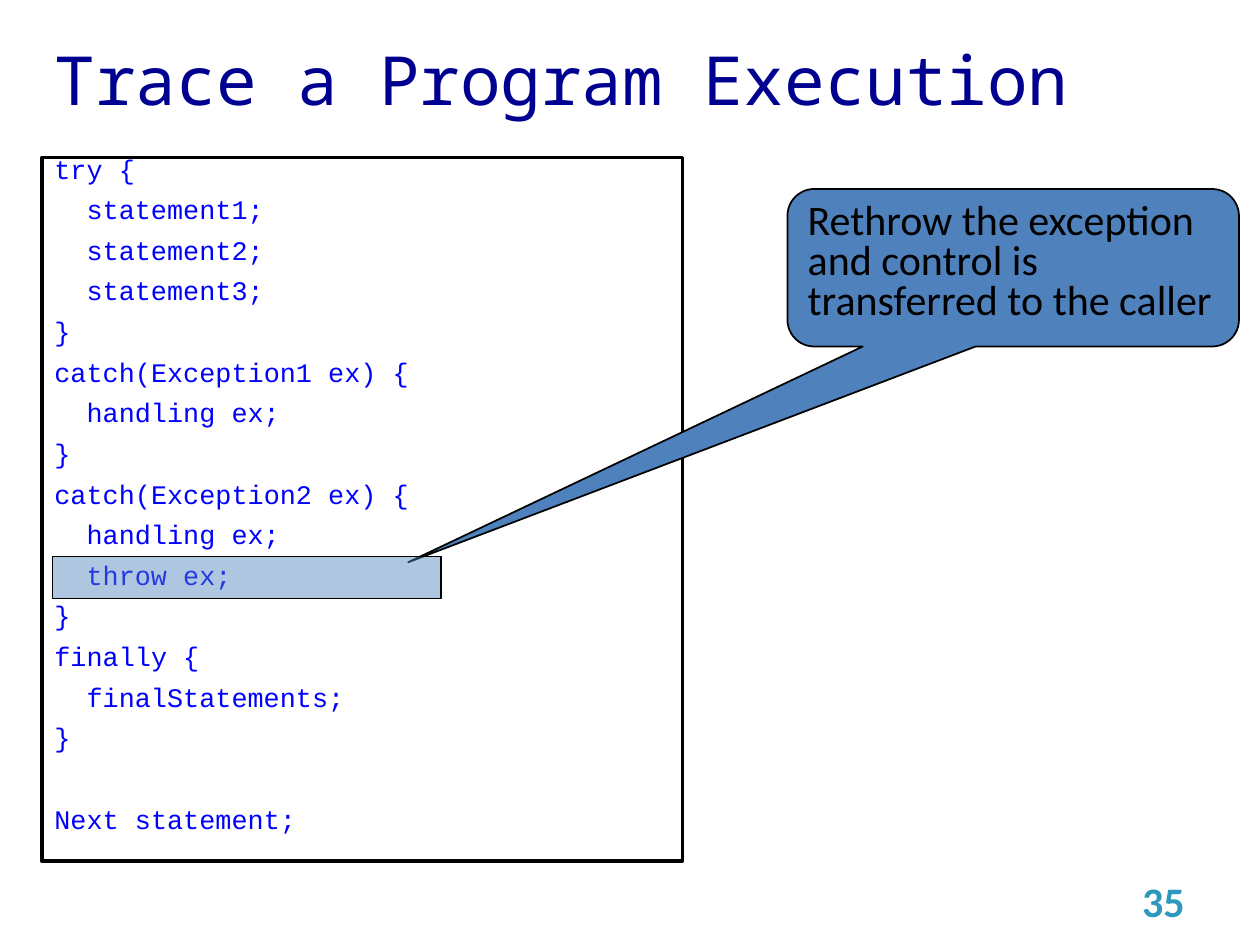
"""Build the slide that traces exception handling to a rethrow."""
from lxml.etree import SubElement
from pptx import Presentation
from pptx.dml.color import RGBColor
from pptx.enum.shapes import MSO_SHAPE
from pptx.enum.text import MSO_ANCHOR, PP_ALIGN
from pptx.oxml.ns import qn
from pptx.util import Pt

NAVY = RGBColor(0x00, 0x00, 0x90)
CODE_BLUE = RGBColor(0x00, 0x00, 0xFF)
STEEL = RGBColor(0x4F, 0x81, 0xBD)
TEAL = RGBColor(0x2E, 0x98, 0xBD)
BLACK = RGBColor(0x00, 0x00, 0x00)
WHITE = RGBColor(0xFF, 0xFF, 0xFF)
INDENT = 18.4
LINE_GAP = 12.2
LINE_PITCH = 23.25
CODE = [
    (0, "try {"),
    (1, "statement1;"),
    (1, "statement2;"),
    (1, "statement3;"),
    (0, "}"),
    (0, "catch(Exception1 ex) {"),
    (1, "handling ex;"),
    (0, "}"),
    (0, "catch(Exception2 ex) {"),
    (1, "handling ex;"),
    (1, "throw ex;"),
    (0, "}"),
    (0, "finally {"),
    (1, "finalStatements;"),
    (0, "}"),
    (0, "Next statement;"),
]


def write(p, text, font, size, color, bold=False, align=PP_ALIGN.LEFT, spacing=1.0, before=0):
    p.alignment = align
    p.line_spacing = spacing
    p.space_before = Pt(before)
    r = p.add_run()
    r.text = text
    r.font.name = font
    r.font.size = Pt(size)
    r.font.bold = bold
    r.font.color.rgb = color


def add_box(shapes, kind, left, top, width, height, fill, line_width):
    sp = shapes.add_shape(kind, Pt(left), Pt(top), Pt(width), Pt(height))
    sp.shadow.inherit = False
    sp.fill.solid()
    sp.fill.fore_color.rgb = fill
    sp.line.color.rgb = BLACK
    sp.line.width = Pt(line_width)
    sp.text_frame.word_wrap = True
    sp.text_frame.vertical_anchor = MSO_ANCHOR.TOP
    return sp


prs = Presentation()
prs.slide_width, prs.slide_height = Pt(720), Pt(540)
s = prs.slides.add_slide(prs.slide_layouts[5])

title = s.shapes.title
title.left, title.top, title.width, title.height = Pt(24), Pt(24), Pt(642), Pt(42)
title.text_frame.vertical_anchor = MSO_ANCHOR.MIDDLE
write(title.text_frame.paragraphs[0], "Trace a Program Execution", "Noto Sans Mono", 38.7, NAVY)

code_box = add_box(s.shapes, MSO_SHAPE.RECTANGLE, 24, 90, 366, 402, WHITE, 2)
tf = code_box.text_frame
for i, (level, text) in enumerate(CODE):
    p = tf.add_paragraph() if i else tf.paragraphs[0]
    before = LINE_GAP + LINE_PITCH if text == "Next statement;" else LINE_GAP
    write(p, text, "Courier New", 15.3, CODE_BLUE, spacing=0.6, before=before)
    p._p.get_or_add_pPr().set("marL", str(int(Pt(level * INDENT))))

callout = add_box(s.shapes, MSO_SHAPE.ROUNDED_RECTANGULAR_CALLOUT, 450, 108, 258, 90, STEEL, 1)
for i, value in enumerate((-1.34, 1.87, 0.17)):
    callout.adjustments[i] = value
write(callout.text_frame.paragraphs[0],
      "Rethrow the exception and control is transferred to the caller",
      "Calibri", 24, BLACK, spacing=0.8)

highlight = add_box(s.shapes, MSO_SHAPE.RECTANGLE, 30, 318, 222, 24, STEEL, 1)
color = highlight.fill._xPr.find(qn("a:solidFill"))[0]
SubElement(color, qn("a:alpha")).set("val", "45000")

number = s.shapes.add_textbox(Pt(516), Pt(500.4), Pt(168), Pt(28.8))
number.text_frame.word_wrap = True
number.text_frame.vertical_anchor = MSO_ANCHOR.MIDDLE
write(number.text_frame.paragraphs[0], "35", "Calibri", 24, TEAL, bold=True, align=PP_ALIGN.RIGHT)

prs.save("out.pptx")
